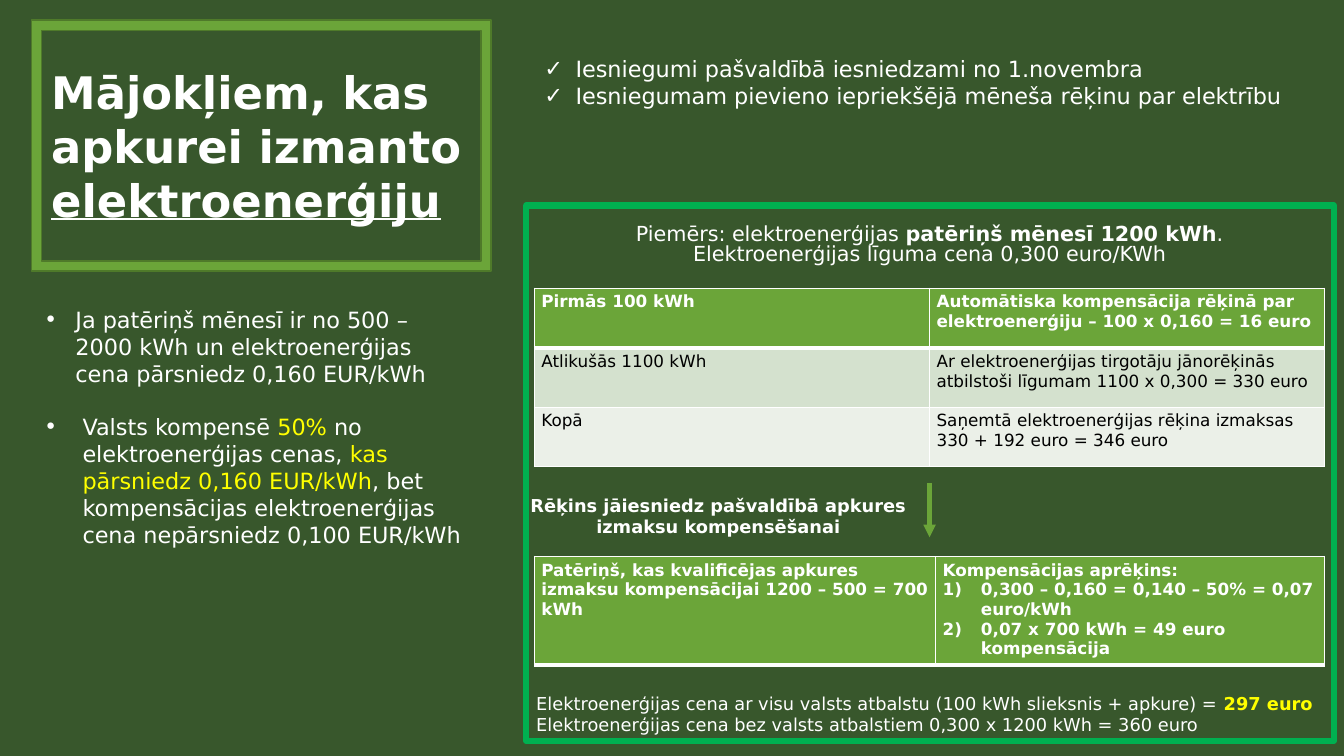
from pptx import Presentation
from pptx.dml.color import RGBColor
from pptx.enum.shapes import MSO_CONNECTOR, MSO_SHAPE
from pptx.enum.text import MSO_ANCHOR, PP_ALIGN
from pptx.oxml.ns import qn
from pptx.util import Inches, Pt
from lxml.etree import SubElement

WHITE, BLACK, YELLOW = "FFFFFF", "000000", "FFFF00"
DARK, GREEN, EDGE, BRIGHT = "38572C", "6BA539", "4F7A2A", "00B050"
PALE, PALEST = "D4E1CE", "EBF0E8"


def rgb(value):
    return RGBColor.from_string(value)


def write(frame, *runs, size=16, color=WHITE, bold=False, align=PP_ALIGN.LEFT,
          bullet=None, indent=0, before=0, spacing=1.0):
    """Add a paragraph of strings or (string, overrides) pairs to a text frame."""
    paragraph = frame.paragraphs[0]
    if paragraph.runs:
        paragraph = frame.add_paragraph()
    paragraph.alignment = align
    paragraph.line_spacing = spacing
    paragraph.space_before = Pt(before)
    if bullet:
        properties = paragraph._p.get_or_add_pPr()
        properties.set("marL", str(Inches(indent)))
        properties.set("indent", str(-Inches(indent)))
        if bullet == "1)":
            SubElement(properties, qn("a:buFont"), typeface="+mj-lt")
            SubElement(properties, qn("a:buAutoNum"), type="arabicParenR")
        else:
            SubElement(properties, qn("a:buFont"), typeface="DejaVu Sans")
            SubElement(properties, qn("a:buChar"), char=bullet)
    for part in runs:
        text, changes = (part, {}) if isinstance(part, str) else part
        run = paragraph.add_run()
        run.text = text
        run.font.name = "DejaVu Sans"
        run.font.size = Pt(size)
        run.font.bold = changes.get("bold", bold)
        run.font.underline = changes.get("underline", False)
        run.font.color.rgb = rgb(changes.get("color", color))


class SlideBuilder:
    """Holds the current slide and draws each kind of element on it."""

    def __init__(self, slide):
        self.slide = slide
        slide.background.fill.solid()
        slide.background.fill.fore_color.rgb = rgb(DARK)

    def text(self, left, top, width, height):
        frame = self.slide.shapes.add_textbox(*map(Inches, (left, top, width, height))).text_frame
        frame.word_wrap = True
        return frame

    def shape(self, preset, left, top, width, height, fill=None, line=None, weight=1):
        shape = self.slide.shapes.add_shape(preset, *map(Inches, (left, top, width, height)))
        shape.shadow.inherit = False
        if fill:
            shape.fill.solid()
            shape.fill.fore_color.rgb = rgb(fill)
        else:
            shape.fill.background()
        shape.line.color.rgb = rgb(line)
        shape.line.width = Pt(weight)
        return shape

    def arrow(self, x, top, bottom):
        arrow = self.slide.shapes.add_connector(
            MSO_CONNECTOR.STRAIGHT, Inches(x), Inches(top), Inches(x), Inches(bottom))
        arrow.line.color.rgb = rgb(GREEN)
        arrow.line.width = Pt(3)
        SubElement(arrow.line._get_or_add_ln(), qn("a:tailEnd"), type="triangle")
        SubElement(arrow._element.spPr, qn("a:effectLst"))

    def table(self, left, top, widths, row_height, rows, fills):
        table = self.slide.shapes.add_table(
            len(rows), len(widths), Inches(left), Inches(top),
            Inches(sum(widths)), Inches(row_height * len(rows))).table
        for column, width in zip(table.columns, widths):
            column.width = Inches(width)
        for index, (row, fill) in enumerate(zip(rows, fills)):
            table.rows[index].height = Inches(row_height)
            for cell, paragraphs in zip(table.rows[index].cells, row):
                cell.margin_left = cell.margin_right = Inches(0.07)
                cell.margin_top = cell.margin_bottom = Inches(0.04)
                self.borders(cell, top=3 if index == 1 else 1, bottom=3 if index == 0 else 1)
                cell.fill.solid()
                cell.fill.fore_color.rgb = rgb(fill)
                for number, paragraph in enumerate(paragraphs):
                    write(cell.text_frame, paragraph, size=12, bold=index == 0,
                          color=BLACK if index else WHITE,
                          bullet="1)" if number and index == 0 else None, indent=0.38)

    def borders(self, cell, top, bottom):
        properties = cell._tc.get_or_add_tcPr()
        for side, weight in (("L", 1), ("R", 1), ("T", top), ("B", bottom)):
            line = SubElement(properties, qn(f"a:ln{side}"), w=str(Pt(weight)))
            SubElement(SubElement(line, qn("a:solidFill")), qn("a:srgbClr"), val=WHITE)


def main():
    deck = Presentation()
    deck.slide_width, deck.slide_height = Inches(13.33), Inches(7.5)
    builder = SlideBuilder(deck.slides.add_slide(deck.slide_layouts[6]))

    example = builder.text(5.42, 2.19, 7.6, 0.51)
    write(example, "Piemērs: elektroenerģijas ",
          ("patēriņš mēnesī 1200 kWh", {"bold": True}),
          ". Elektroenerģijas līguma cena 0,300 euro/KWh",
          size=14.8, align=PP_ALIGN.CENTER, spacing=0.8)

    builder.table(5.3, 2.86, (3.92, 3.92), 0.59, [
        (["Pirmās 100 kWh"],
         ["Automātiska kompensācija rēķinā par elektroenerģiju – 100 x 0,160 = 16 euro"]),
        (["Atlikušās 1100 kWh"],
         ["Ar elektroenerģijas tirgotāju jānorēķinās atbilstoši līgumam 1100 x 0,300 = 330 euro"]),
        (["Kopā"],
         ["Saņemtā elektroenerģijas rēķina izmaksas", "330 + 192 euro = 346 euro"]),
    ], (GREEN, PALE, PALEST))
    builder.arrow(9.22, 4.79, 5.33)
    builder.table(5.3, 5.52, (3.98, 3.86), 1.05, [
        (["Patēriņš, kas kvalificējas apkures izmaksu kompensācijai 1200 – 500 = 700 kWh"],
         ["Kompensācijas aprēķins:", "0,300 – 0,160 = 0,140 – 50% = 0,07 euro/kWh",
          "0,07 x 700 kWh = 49 euro kompensācija"]),
    ], (GREEN,))

    submission = builder.text(5.02, 4.86, 4.21, 0.53)
    write(submission, "Rēķins jāiesniedz pašvaldībā apkures izmaksu kompensēšanai",
          size=12.7, bold=True, align=PP_ALIGN.CENTER)

    totals = builder.text(5.22, 6.82, 8.01, 0.53)
    write(totals, "Elektroenerģijas cena ar visu valsts atbalstu (100 kWh slieksnis + apkure) = ",
          ("297 euro", {"color": YELLOW, "bold": True}), size=12.7)
    write(totals, "Elektroenerģijas cena bez valsts atbalstiem 0,300 x 1200 kWh = 360 euro", size=12.7)

    heading = builder.shape(MSO_SHAPE.FRAME, 0.31, 0.2, 4.56, 2.49, fill=GREEN, line=EDGE)
    heading.adjustments[0] = 0.04
    heading.text_frame.word_wrap = True
    heading.text_frame.vertical_anchor = MSO_ANCHOR.MIDDLE
    write(heading.text_frame, "Mājokļiem, kas apkurei izmanto ",
          ("elektroenerģiju", {"underline": True}), size=32, bold=True)

    applications = builder.text(5.3, 0.5, 7.72, 0.64)
    for step in ("Iesniegumi pašvaldībā iesniedzami no 1.novembra",
                 "Iesniegumam pievieno iepriekšējā mēneša rēķinu par elektrību"):
        write(applications, step, bullet="✓", indent=0.31)

    conditions = builder.text(0.34, 2.99, 4.39, 2.83)
    write(conditions, "Ja patēriņš mēnesī ir no 500 – 2000 kWh un elektroenerģijas "
          "cena pārsniedz 0,160 EUR/kWh", bullet="•", indent=0.31)
    write(conditions, "Valsts kompensē ", ("50%", {"color": YELLOW}),
          " no elektroenerģijas cenas, ", ("kas pārsniedz 0,160 EUR/kWh", {"color": YELLOW}),
          ", bet kompensācijas elektroenerģijas cena nepārsniedz 0,100 EUR/kWh",
          bullet="•", indent=0.38, before=19)

    builder.shape(MSO_SHAPE.RECTANGLE, 5.22, 2.04, 8.01, 5.31, line=BRIGHT, weight=4.5)
    deck.save("out.pptx")


if __name__ == "__main__":
    main()
